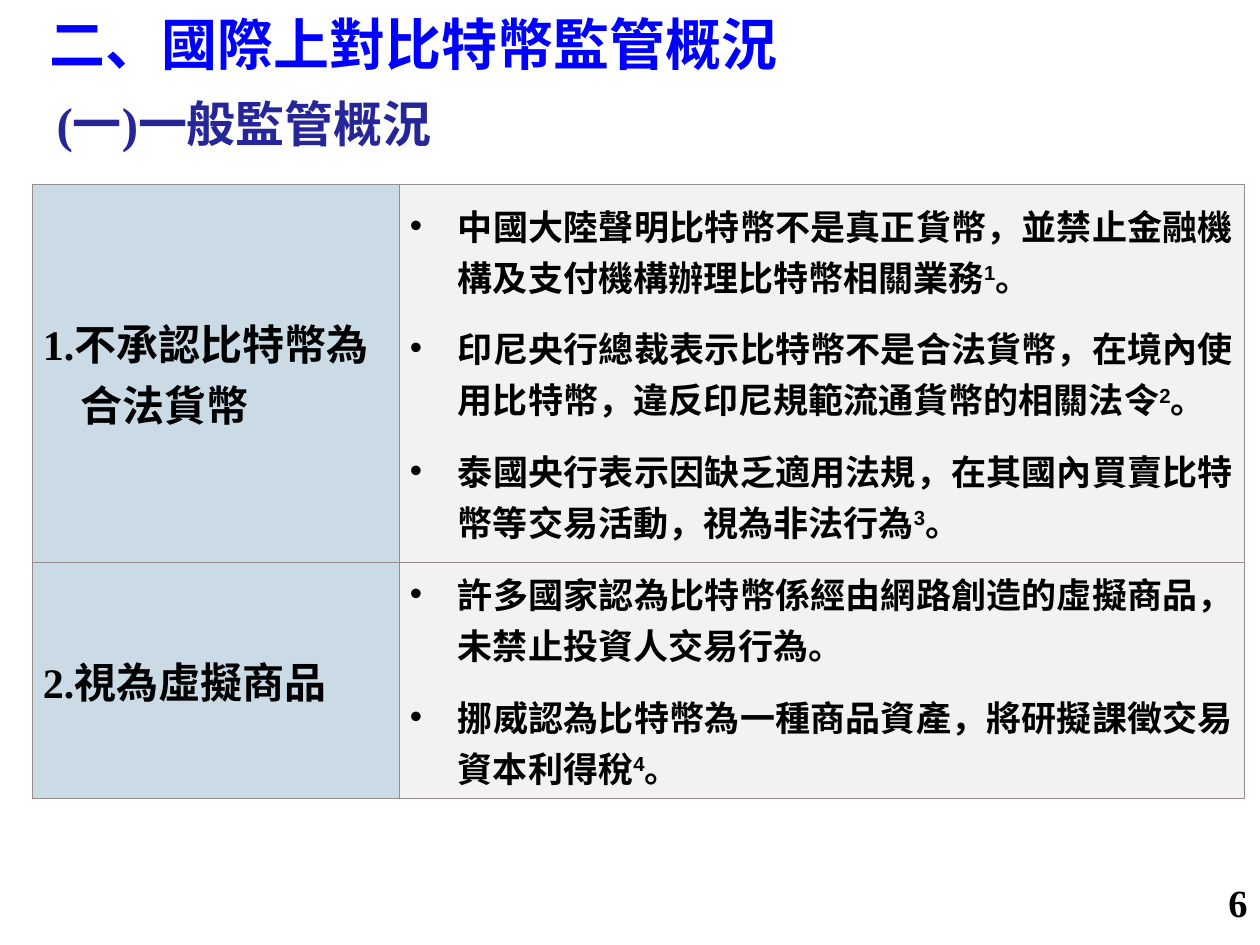
from lxml import etree
from pptx import Presentation
from pptx.dml.color import RGBColor
from pptx.enum.text import MSO_ANCHOR, MSO_AUTO_SIZE, PP_ALIGN
from pptx.oxml.ns import qn
from pptx.util import Pt

PX = 914400 / 126
BLUE = RGBColor(0x00, 0x00, 0xFF)
INDIGO = RGBColor(0x26, 0x26, 0x99)
BLACK = RGBColor(0x00, 0x00, 0x00)
LABEL_FILL = RGBColor(0xCA, 0xDB, 0xE5)
DETAIL_FILL = RGBColor(0xF2, 0xF2, 0xF2)
BORDER = RGBColor(0x96, 0x8C, 0x8C)
LEFT, RIGHT, JUSTIFY = PP_ALIGN.LEFT, PP_ALIGN.RIGHT, PP_ALIGN.JUSTIFY
TOP, MIDDLE = MSO_ANCHOR.TOP, MSO_ANCHOR.MIDDLE
NO_AUTOFIT = MSO_AUTO_SIZE.NONE
SERIF, SANS = "Times New Roman", "Arial"

# Each row: label, then (sentence, footnote number) pairs
ROWS = [
    ("1.不承認比特幣為合法貨幣", [
        ("中國大陸聲明比特幣不是真正貨幣，並禁止金融機構及支付機構辦理比特幣相關業務", "1"),
        ("印尼央行總裁表示比特幣不是合法貨幣，在境內使用比特幣，違反印尼規範流通貨幣的相關法令", "2"),
        ("泰國央行表示因缺乏適用法規，在其國內買賣比特幣等交易活動，視為非法行為", "3"),
    ]),
    ("2.視為虛擬商品", [
        ("許多國家認為比特幣係經由網路創造的虛擬商品，未禁止投資人交易行為", ""),
        ("挪威認為比特幣為一種商品資產，將研擬課徵交易資本利得稅", "4"),
    ]),
]


def px(length):
    return round(length * PX)


def add_span(para, text, *, size, font=SERIF, color=BLACK, raised=False):
    span = para.add_run()
    span.text = text
    span.font.size = Pt(size)
    span.font.name = font
    span.font.bold = True
    span.font.color.rgb = color
    if raised:
        span.font._element.set("baseline", "30000")


def set_indent(para, hang, bullet=None):
    """Hang the first line, with a bullet character or none."""
    props = para._p.get_or_add_pPr()
    props.set("marL", str(px(hang)))
    props.set("indent", str(-px(hang)))
    if bullet:
        etree.SubElement(props, qn("a:buFont"), typeface=SANS)
        etree.SubElement(props, qn("a:buChar"), char=bullet)
    else:
        etree.SubElement(props, qn("a:buNone"))


def place(shape, box, anchor):
    """Move a text shape to box and return its first paragraph."""
    shape.left, shape.top, shape.width, shape.height = map(px, box)
    frame = shape.text_frame
    frame.word_wrap = True
    frame.auto_size = NO_AUTOFIT
    frame.vertical_anchor = anchor
    return frame.paragraphs[0]


def add_heading(page, box):
    left, top, width, _ = box
    para = place(page.shapes.title, (left, top, width, 86), MIDDLE)
    para.alignment = LEFT
    add_span(para, "二、國際上對比特幣監管概況", size=32, color=BLUE)

    para = place(page.placeholders[1], (left + 7, top + 76, width - 15, 100), TOP)
    para.alignment = JUSTIFY
    para.line_spacing = Pt(40)
    para.space_before = Pt(0)
    set_indent(para, 0)
    add_span(para, "(一)一般監管概況", size=28, color=INDIGO)


def format_cell(cell, fill):
    cell.vertical_anchor = MIDDLE
    cell.margin_left = cell.margin_right = px(11)
    cell.margin_top = cell.margin_bottom = px(6)
    props = cell._tc.get_or_add_tcPr()
    for side in ("a:lnL", "a:lnR", "a:lnT", "a:lnB"):
        line = etree.SubElement(props, qn(side), w=str(Pt(0.5)))
        solid = etree.SubElement(line, qn("a:solidFill"))
        etree.SubElement(solid, qn("a:srgbClr"), val=str(BORDER))
    cell.fill.solid()
    cell.fill.fore_color.rgb = fill


def fill_details(frame, details):
    for index, (sentence, note) in enumerate(details):
        para = frame.add_paragraph() if index else frame.paragraphs[0]
        para.alignment = JUSTIFY
        para.space_before = Pt(12)
        set_indent(para, 48, "•")
        if note:
            add_span(para, sentence, size=20, font=SANS)
            add_span(para, note, size=20, font=SANS, raised=True)
            add_span(para, "。", size=20, font=SANS)
        else:
            add_span(para, sentence + "。", size=20, font=SANS)


def add_regulation_table(page, box, label_width, row_heights):
    left, top, width, height = box
    table = page.shapes.add_table(len(ROWS), 2, *map(px, box)).table
    table.first_row = table.horz_banding = False
    table.columns[0].width = px(label_width)
    table.columns[1].width = px(width - label_width)
    for index, (label, details) in enumerate(ROWS):
        table.rows[index].height = px(row_heights[index])
        label_cell, detail_cell = table.cell(index, 0), table.cell(index, 1)
        format_cell(label_cell, LABEL_FILL)
        format_cell(detail_cell, DETAIL_FILL)
        para = label_cell.text_frame.paragraphs[0]
        set_indent(para, 38)
        add_span(para, label, size=24)
        fill_details(detail_cell.text_frame, details)


def add_page_number(page, box):
    para = place(page.shapes.add_textbox(0, 0, 0, 0), box, TOP)
    para.alignment = RIGHT
    add_span(para, "6", size=22)


def main():
    deck = Presentation()
    deck.slide_width, deck.slide_height = px(1260), px(945)
    page = deck.slides.add_slide(deck.slide_layouts[1])
    add_heading(page, (37, 0, 1216, 176))
    add_regulation_table(page, (32, 184, 1212, 614), 367, (378, 236))
    add_page_number(page, (998, 873, 262, 63))
    deck.save("out.pptx")


if __name__ == "__main__":
    main()
